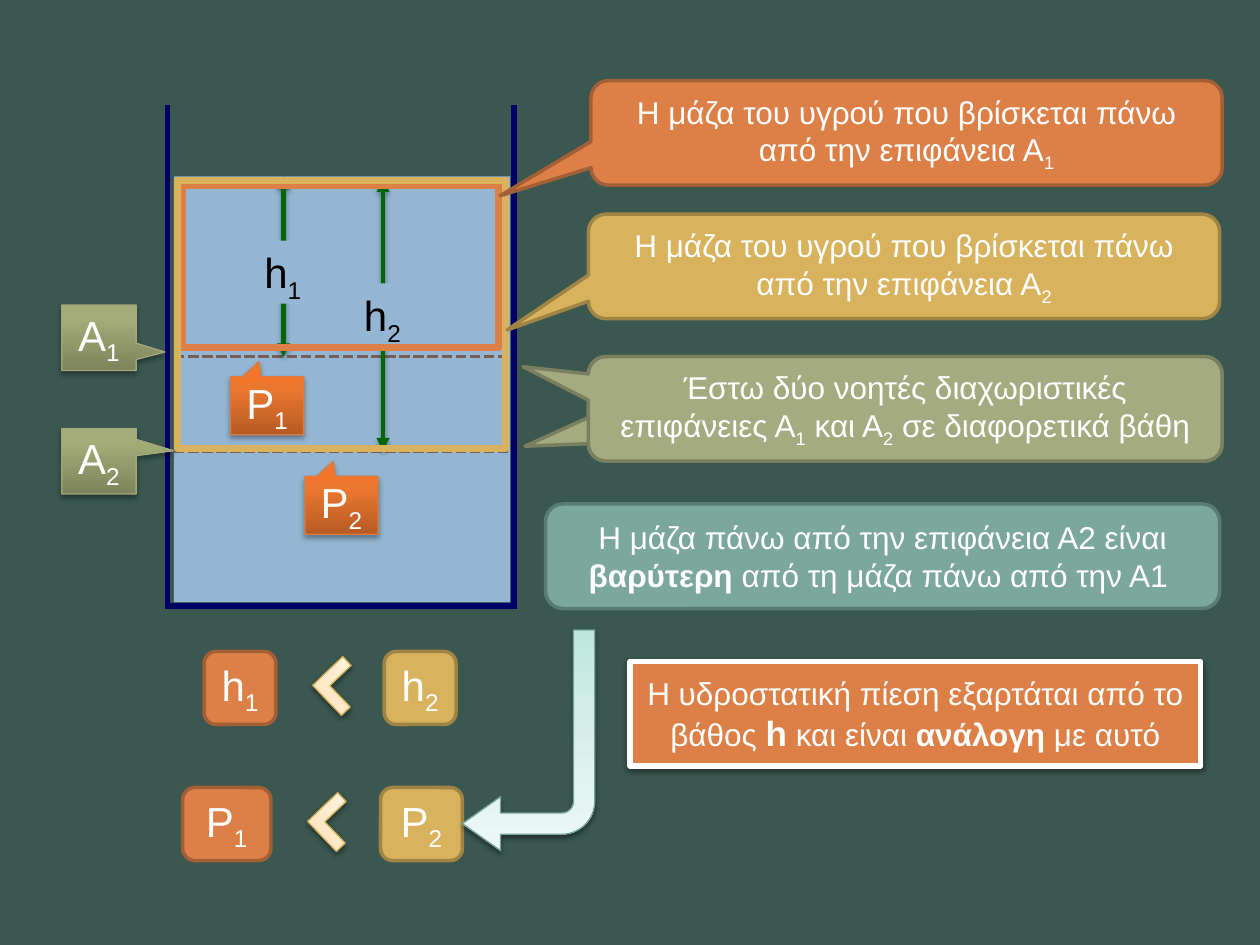
"""Build a slide on how hydrostatic pressure grows with depth."""
from lxml.etree import SubElement
from pptx import Presentation
from pptx.dml.color import RGBColor
from pptx.enum.dml import MSO_LINE
from pptx.enum.shapes import MSO_CONNECTOR, MSO_SHAPE
from pptx.enum.text import MSO_ANCHOR, PP_ALIGN
from pptx.oxml.ns import qn
from pptx.util import Inches, Pt

WIDTH, HEIGHT, COLS = 10, 7.5, 100
THEME = {
    "font": "Arial", "background": "3A5750", "light": "FFFFFF", "dark": "000000",
    "label": 24, "body": 18, "strong": 20,
    "wall": ("000066", 3), "level": ("775F55", 2), "depth": ("006600", 2.5),
}
TAG_SHADOW, SOFT_SHADOW = (35, 3.1, 1.8), (38, 3.1, 1.6)
STYLES = {
    "liquid": ("94B6D2", None, 0, None),
    "orange": ("DD8047", "A35F35", 2, None),
    "gold": ("D8B25C", "A08444", 2, None),
    "sage": ("A5AB81", "7A7F5F", 2, None),
    "teal": ("7BA79D", "5B7C74", 2, None),
    "orange frame": (None, "DD8047", 4, None),
    "gold frame": (None, "D8B25C", 4, None),
    "conclusion": ("DD8047", "FFFFFF", 3, SOFT_SHADOW),
    "area tag": (((0, "7E845C"), (80, "A4AC77"), (100, "A6AE76")), "A2A87D", 0.75, TAG_SHADOW),
    "pressure tag": (((0, "B65B24"), (80, "EC772F"), (100, "F1762C")), "DC7C42", 0.75, TAG_SHADOW),
    "less than": (((0, "FFE1B2"), (35, "FFE9C8"), (100, "FFF6EA")), "D6AF57", 0.75, SOFT_SHADOW),
    "arrow": (((0, "BEE6DC"), (35, "D1EDE6"), (100, "EDF9F6")), "77A49A", 0.75, SOFT_SHADOW),
}

MASS = "Η μάζα του υγρού που βρίσκεται πάνω από την επιφάνεια Α"
SURFACES = [("Έστω δύο νοητές διαχωριστικές επιφάνειες Α", ""), ("1", "sub"), (" και Α", ""),
            ("2", "sub"), (" σε διαφορετικά βάθη", "")]
HEAVIER = [("Η μάζα πάνω από την επιφάνεια Α2 είναι ", ""), ("βαρύτερη", "bold"),
           (" από τη μάζα πάνω από την Α1 ", "")]
CONCLUSION = [("Η υδροστατική πίεση εξαρτάται από το βάθος ", ""), ("h", "strong"),
              (" και είναι ", ""), ("ανάλογη", "bold"), (" με αυτό", "")]

SURFACE_BOX = (46.7, 28.3, 50.3, 8.3)
WALLS = [(13.3, 8.3, 13.3, 48.3), (40.8, 8.3, 40.8, 48.3), (13.4, 48.1, 40.7, 48.1)]
LEVELS = [(13.8, y, 40.5, y) for y in (28.3, 35.8)]
AREA_TAGS = [("1", 24.2, (0.886, 0.219)), ("2", 34, (1.004, -0.159))]
DEPTHS = [("1", 22.5, 14, 28.3, (20, 19.1)), ("2", 30.4, 14.2, 35.8, (27.9, 22.5))]
PRESSURE_TAGS = [("1", 18.3, 29.9), ("2", 24.2, 37.8)]
MASS_CALLOUTS = [("1", "orange", (46.9, 6.4, 50.1, 8.3), (-0.644, 0.601, 0.167)),
                 ("2", "gold", (46.7, 17, 50.1, 8.3), (-0.629, 0.608, 0.167))]
COMPARISONS = [("h", 51.7, (16.2, 5.7), 25.5, (30.5, 5.7)),
               ("P", 62.5, (14.5, 7), 25.1, (30.2, 6.5))]


def grid(n):
    return Inches(n * WIDTH / COLS)


def subscripted(base, index):
    return [(base, ""), (index, "sub")]


def add_effects(sp, shadow):
    effects = sp._element.spPr.find(qn("a:effectLst"))
    if effects is None:
        effects = SubElement(sp._element.spPr, qn("a:effectLst"))
    if shadow:
        alpha, blur, dist = shadow
        outer = SubElement(effects, qn("a:outerShdw"), blurRad=str(Pt(blur)),
                           dist=str(Pt(dist)), dir="5400000", rotWithShape="0")
        color = SubElement(outer, qn("a:srgbClr"), val="000000")
        SubElement(color, qn("a:alpha"), val=str(alpha * 1000))


def paint(fill, color):
    if color is None:
        fill.background()
    elif isinstance(color, str):
        fill.solid()
        fill.fore_color.rgb = RGBColor.from_string(color)
    else:
        fill.gradient()
        fill.gradient_angle = 90
        stops = fill._xPr.find(qn("a:gradFill")).find(qn("a:gsLst"))
        for stop in list(stops):
            stops.remove(stop)
        for position, rgb in color:
            stop = SubElement(stops, qn("a:gs"), pos=str(position * 1000))
            SubElement(stop, qn("a:srgbClr"), val=rgb)


def write(sp, runs, size, color, align, anchor):
    tf = sp.text_frame
    tf.word_wrap = True
    tf.vertical_anchor = anchor
    p = tf.paragraphs[0]
    p.alignment = align
    p.font.name, p.font.size = THEME["font"], Pt(THEME[size])
    p.font.color.rgb = RGBColor.from_string(THEME[color])
    for text, role in runs:
        r = p.add_run()
        r.text = text
        if role == "sub":
            r._r.get_or_add_rPr().set("baseline", "-25000")
        elif role:
            r.font.bold = True
            if role == "strong":
                r.font.size = Pt(THEME["strong"])


def add_box(s, kind, at, style, runs=(), size="label", adj=(), rot=0,
            color="light", align=PP_ALIGN.CENTER, anchor=MSO_ANCHOR.MIDDLE):
    fill, line, width, shadow = STYLES[style]
    sp = s.shapes.add_shape(kind, *map(grid, at))
    sp.rotation = rot
    for i, value in enumerate(adj):
        sp.adjustments[i] = value
    sp.shadow.inherit = False
    paint(sp.fill, fill)
    paint(sp.line.fill, line)
    if line:
        sp.line.width = Pt(width)
    add_effects(sp, shadow)
    if runs:
        write(sp, runs, size, color, align, anchor)


def add_line(s, ends, style, dash=None, arrows=False):
    color, width = THEME[style]
    sp = s.shapes.add_connector(MSO_CONNECTOR.STRAIGHT, *map(grid, ends))
    sp.line.color.rgb = RGBColor.from_string(color)
    sp.line.width = Pt(width)
    if dash:
        sp.line.dash_style = dash
    if arrows:
        for end in ("a:headEnd", "a:tailEnd"):
            SubElement(sp.line._get_or_add_ln(), qn(end), type="triangle")
    add_effects(sp, SOFT_SHADOW if arrows else None)


def add_tank(s):
    for ends in WALLS:
        add_line(s, ends, "wall")
    add_box(s, MSO_SHAPE.RECTANGLE, (13.8, 14, 26.7, 33.8), "liquid")
    for ends in LEVELS:
        add_line(s, ends, "level", dash=MSO_LINE.SQUARE_DOT)
    for index, y, adj in AREA_TAGS:
        add_box(s, MSO_SHAPE.RECTANGULAR_CALLOUT, (4.9, y, 5.9, 5.2), "area tag",
                subscripted("A", index), adj=adj)
    for index, x, top, bottom, corner in DEPTHS:
        add_line(s, (x, top, x, bottom), "depth", arrows=True)
        add_box(s, MSO_SHAPE.RECTANGLE, (*corner, 5.4, 5), "liquid", subscripted("h", index),
                color="dark", align=PP_ALIGN.LEFT, anchor=MSO_ANCHOR.TOP)
    add_box(s, MSO_SHAPE.RECTANGLE, (14.5, 14.7, 25.1, 12.9), "orange frame")
    for index, x, y in PRESSURE_TAGS:
        add_box(s, MSO_SHAPE.RECTANGULAR_CALLOUT, (x, y, 5.8, 4.6), "pressure tag",
                subscripted("P", index), adj=(-0.112, -0.758))
    add_box(s, MSO_SHAPE.RECTANGLE, (14.1, 14.3, 26, 21.3), "gold frame")


def add_explanations(s):
    callout = MSO_SHAPE.ROUNDED_RECTANGULAR_CALLOUT
    add_box(s, callout, SURFACE_BOX, "sage", SURFACES, "body", (-0.603, -0.402, 0.167))
    for index, style, at, adj in MASS_CALLOUTS:
        add_box(s, callout, at, style, subscripted(MASS, index), "body", adj)
    add_box(s, MSO_SHAPE.ROUNDED_RECTANGLE, (43.3, 40, 53.5, 8.3), "teal", HEAVIER, "body")


def add_comparisons(s):
    for symbol, y, (x1, w1), sign_x, (x2, w2) in COMPARISONS:
        for index, x, w, style in (("1", x1, w1, "orange"), ("2", x2, w2, "gold")):
            add_box(s, MSO_SHAPE.ROUNDED_RECTANGLE, (x, y, w, 5.8), style,
                    subscripted(symbol, index))
        add_box(s, MSO_SHAPE.CORNER, (sign_x, y + 1.1, 3.3, 3.3), "less than",
                adj=(0.29, 0.29), rot=46.3)


def main():
    prs = Presentation()
    prs.slide_width, prs.slide_height = Inches(WIDTH), Inches(HEIGHT)
    s = prs.slides.add_slide(prs.slide_layouts[6])
    paint(s.background.fill, THEME["background"])
    add_box(s, MSO_SHAPE.ROUNDED_RECTANGULAR_CALLOUT, SURFACE_BOX, "sage",
            adj=(-0.6, 0.358, 0.167))
    add_tank(s)
    add_explanations(s)
    add_comparisons(s)
    add_box(s, MSO_SHAPE.BENT_ARROW, (36.7, 50, 10.5, 17.5), "arrow",
            adj=(0.16, 0.203, 0.287, 0.25), rot=180)
    add_box(s, MSO_SHAPE.RECTANGLE, (50, 52.5, 45.3, 8.3), "conclusion", CONCLUSION, "body")
    prs.save("out.pptx")


if __name__ == "__main__":
    main()
